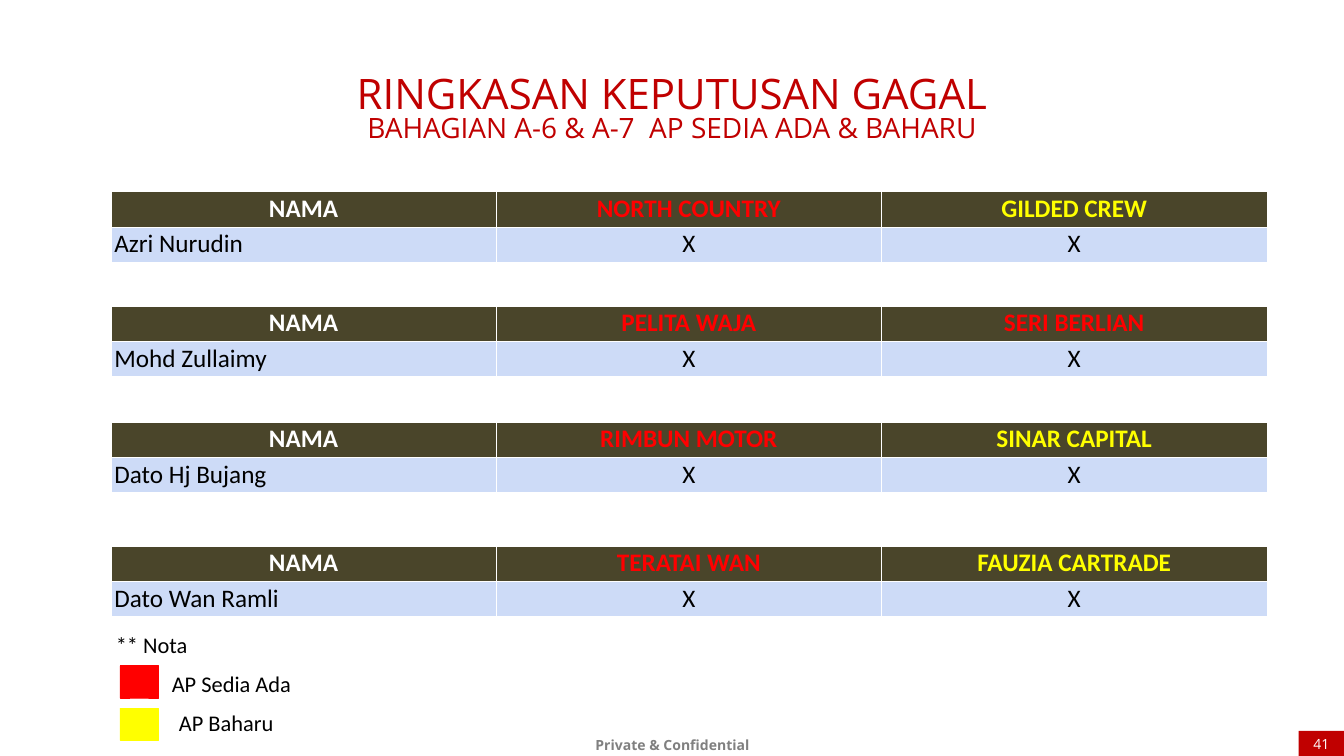
from pptx import Presentation
from pptx import util as u
from pptx.dml.color import RGBColor
from pptx.enum import shapes, text

WIDTH, HEIGHT = 26.67, 15
LEFT, TABLE_WIDTH, ROW_HEIGHT = 2.2, 22.94, 0.7
RED, YELLOW, CRIMSON, WHITE, BLACK = "FF0000", "FFFF00", "C00000", "FFFFFF", "000000"
OLIVE, PALE_BLUE, GREY = "4A452A", "CDDBF7", "808080"
CENTER, START = text.PP_ALIGN.CENTER, text.PP_ALIGN.LEFT

TITLE = [("RINGKASAN KEPUTUSAN GAGAL", 60), ("BAHAGIAN A-6 & A-7  AP SEDIA ADA & BAHARU", 40)]
RESULTS = [
    (3.8, "Azri Nurudin", ("NORTH COUNTRY", RED), ("GILDED CREW", YELLOW)),
    (6.07, "Mohd Zullaimy", ("PELITA WAJA", RED), ("SERI BERLIAN", RED)),
    (8.37, "Dato Hj Bujang", ("RIMBUN MOTOR", RED), ("SINAR CAPITAL", YELLOW)),
    (10.83, "Dato Wan Ramli", ("TERATAI WAN", RED), ("FAUZIA CARTRADE", YELLOW)),
]
LEGEND = [("AP Sedia Ada", RED, 13.21, 3.31, 13.25), ("AP Baharu", YELLOW, 14.05, 3.45, 14.03)]


def color(value):
    return RGBColor.from_string(value)


def add_span(para, words, size, tint, font="Calibri", bold=False, align=START):
    para.alignment = align
    span = para.add_run()
    span.text = words
    span.font.name, span.font.size, span.font.bold = font, u.Pt(size), bold
    span.font.color.rgb = color(tint)


def set_margins(frame, side, top):
    frame.margin_left = frame.margin_right = u.Inches(side)
    frame.margin_top = frame.margin_bottom = u.Inches(top)


def add_box(page, left, top, width, height, wrap=True):
    box = page.shapes.add_textbox(*map(u.Inches, (left, top, width, height)))
    box.text_frame.word_wrap = wrap
    return box.text_frame


def add_block(page, left, top, width, height, fill, outlined=True):
    block = page.shapes.add_shape(
        shapes.MSO_SHAPE.RECTANGLE, *map(u.Inches, (left, top, width, height)))
    block.shadow.inherit = False
    block.fill.solid()
    block.fill.fore_color.rgb = color(fill)
    if outlined:
        block.line.color.rgb = color(fill)
        block.line.width = u.Pt(0.75)
    else:
        block.line.fill.background()
    return block.text_frame


def add_title(page):
    title = page.shapes.title
    title.left, title.top, title.width, title.height = map(u.Inches, (1.53, 1.04, 23.61, 1.95))
    frame = title.text_frame
    frame.auto_size = text.MSO_AUTO_SIZE.NONE
    frame.vertical_anchor = text.MSO_ANCHOR.BOTTOM
    set_margins(frame, 0.27, 0.13)
    for index, (words, size) in enumerate(TITLE):
        para = frame.add_paragraph() if index else frame.paragraphs[0]
        para.line_spacing = 0.8
        add_span(para, words, size, CRIMSON, "Open Sans", align=CENTER)


def add_result(page, top, person, *companies):
    rows = [
        [("NAMA", WHITE), *companies],
        [(person, BLACK), *[("X", BLACK) for company in companies]],
    ]
    table = page.shapes.add_table(
        len(rows), len(rows[0]),
        *map(u.Inches, (LEFT, top, TABLE_WIDTH, ROW_HEIGHT * len(rows)))).table
    table.horz_banding = False
    for row, items in enumerate(rows):
        for column, (words, tint) in enumerate(items):
            cell = table.cell(row, column)
            set_margins(cell, 0.07, 0.04)
            cell.fill.solid()
            cell.fill.fore_color.rgb = color(PALE_BLUE if row else OLIVE)
            align = START if row and not column else CENTER
            add_span(cell.text_frame.paragraphs[0], words, 36, tint, bold=not row, align=align)


def main():
    deck = Presentation()
    deck.slide_width, deck.slide_height = u.Inches(WIDTH), u.Inches(HEIGHT)
    page = deck.slides.add_slide(deck.slide_layouts[5])

    footer = add_box(page, 11.53, 14.42, 3.63, 0.78)
    set_margins(footer, 0.24, 0.12)
    footer.paragraphs[0].line_spacing = 1.2
    add_span(footer.paragraphs[0], "Private & Confidential", 20, GREY, "Open Sans", True, CENTER)

    add_title(page)

    number = add_block(page, 25.77, 14.5, 0.9, 0.51, CRIMSON, outlined=False)
    set_margins(number, 0, 0)
    number.vertical_anchor = text.MSO_ANCHOR.MIDDLE
    add_span(number.paragraphs[0], "41", 20, WHITE, "Open Sans", align=CENTER)

    for result in RESULTS:
        add_result(page, *result)

    note = add_box(page, LEFT, 12.47, 1.64, 0.64, wrap=False)
    add_span(note.paragraphs[0], "** Nota", 32, BLACK)
    for words, fill, block_top, left, top in LEGEND:
        add_block(page, 2.38, block_top, 0.76, 0.64, fill)
        label = add_box(page, left, top, 2.59, 0.64, wrap=False)
        add_span(label.paragraphs[0], words, 32, BLACK)

    deck.save("out.pptx")


if __name__ == "__main__":
    main()
